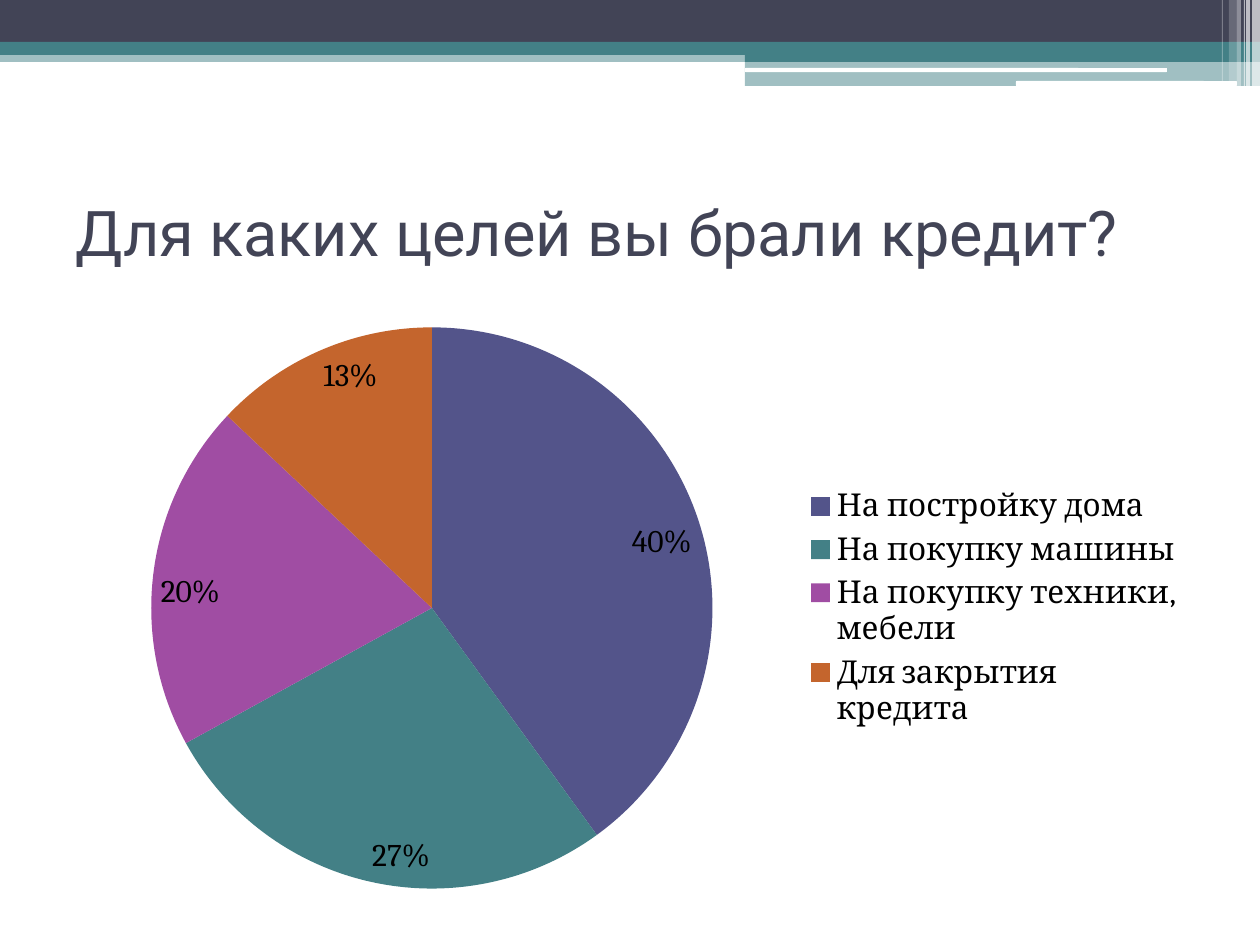
from pptx import Presentation
from pptx.chart.data import CategoryChartData
from pptx.dml.color import RGBColor
from pptx.enum.chart import XL_CHART_TYPE, XL_LABEL_POSITION as LabelPos, XL_LEGEND_POSITION as LegendPos
from pptx.enum.shapes import MSO_SHAPE as Shape
from pptx.enum.text import MSO_ANCHOR as Anchor
from pptx.oxml.xmlchemy import OxmlElement
from pptx.util import Emu, Pt

PX = 914400 / 126
NAVY, TEAL, WHITE = "424456", "438086", "FFFFFF"


def paint(fill, color, alpha=100):
    """Fill with a hex colour at the given opacity in percent."""
    fill.solid()
    fill.fore_color.rgb = RGBColor.from_string(color)
    if alpha < 100:
        opacity = OxmlElement("a:alpha")
        opacity.set("val", str(alpha * 1000))
        fill._xPr.find(".//{*}srgbClr").append(opacity)


def add_text(box, text, *, size, font, color, anchor):
    frame = box.text_frame
    frame.word_wrap = True
    frame.vertical_anchor = anchor
    run = frame.paragraphs[0].add_run()
    run.text = text
    run.font.size = Pt(size)
    run.font.name = font
    run.font.color.rgb = RGBColor.from_string(color)


prs = Presentation()
prs.slide_width, prs.slide_height = Emu(9144000), Emu(6858000)
slide = prs.slides.add_slide(prs.slide_layouts[6])

# Header bands, then the thin vertical stripes at the right edge
RECT, ROUND = Shape.RECTANGLE, Shape.ROUNDED_RECTANGLE
header = [
    (RECT, 0, 50, 1260, 12, TEAL, 50),
    (RECT, 0, 0, 1260, 42, NAVY, 100),
    (RECT, 0, 42, 1260, 13, TEAL, 100),
    (RECT, 745, 49, 515, 13, TEAL, 100),
    (RECT, 745, 62, 515, 24, TEAL, 50),
    (ROUND, 745, 68, 422, 4, WHITE, 100),
    (ROUND, 1016, 81, 221, 5, WHITE, 100),
]
stripes = [(1252, 8, 86, 65), (1246, 4, 86, 65), (1244, 1, 86, 60),
           (1237, 4, 86, 40), (1229, 8, 81, 20), (1222, 1, 81, 30)]
header += [(RECT, left, 0, width, height, WHITE, alpha)
           for left, width, height, alpha in stripes]

for kind, left, top, width, height, color, alpha in header:
    band = slide.shapes.add_shape(
        kind, *(Emu(round(v * PX)) for v in (left, top, width, height)))
    band.shadow.inherit = False
    band.line.fill.background()
    paint(band.fill, color, alpha)

title = slide.shapes.add_textbox(*(Emu(round(v * PX)) for v in (63, 158, 1134, 147)))
add_text(title, "Для каких целей вы брали кредит?",
         size=36, font="Roboto", color=NAVY, anchor=Anchor.MIDDLE)

# Loan purposes as shares of the answers
purposes = [
    ("На постройку дома ", 40, "53548A"),
    ("На покупку машины", 27, TEAL),
    ("На покупку техники, мебели", 20, "A04DA3"),
    ("Для закрытия кредита ", 13, "C4652D"),
]
answers = CategoryChartData()
answers.categories = [purpose for purpose, _, _ in purposes]
answers.add_series("Series 1", [share for _, share, _ in purposes])
pie = slide.shapes.add_chart(
    XL_CHART_TYPE.PIE, *(Emu(round(v * PX)) for v in (63, 310, 1134, 596)), answers).chart
pie.has_title = False
pie.font.size = Pt(18)
pie.font.name = "Cambria"
pie.font.color.rgb = RGBColor.from_string("000000")
pie.has_legend = True
pie.legend.position = LegendPos.RIGHT
pie.legend.include_in_layout = False

plot = pie.plots[0]
plot.vary_by_categories = True
for index, (_, _, color) in enumerate(purposes):
    paint(plot.series[0].points[index].format.fill, color)
plot.has_data_labels = True
labels = plot.data_labels
labels.show_percentage = True
labels.show_value = False
labels.number_format = "0%"
labels.number_format_is_linked = False
labels.position = LabelPos.INSIDE_END

prs.save("out.pptx")
